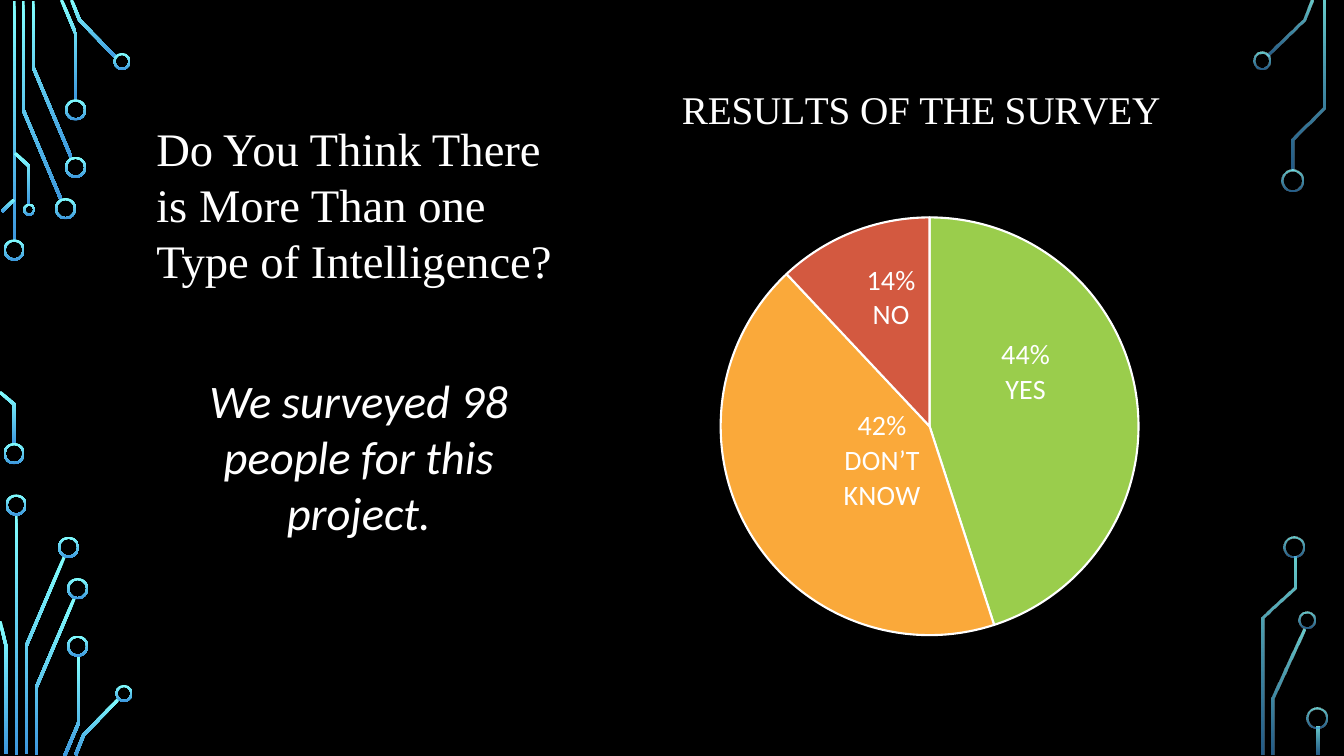
from lxml import etree
from pptx import Presentation
from pptx.chart.data import CategoryChartData
from pptx.dml.color import RGBColor
from pptx.enum import chart as ce, shapes as se, text as te
from pptx.oxml import ns
from pptx.util import Inches, Pt

# Content
ASK = "Do You Think There is More Than one Type of Intelligence?"
NOTE = "We surveyed 98 people for this project."
HEAD = "RESULTS OF THE SURVEY"

BLACK = RGBColor(0, 0, 0)
WHITE = RGBColor(255, 255, 255)
CYAN = RGBColor(0x82, 0xFF, 0xFF)
BLUE = RGBColor(0x3D, 0x97, 0xDE)
GREEN = RGBColor(0x9A, 0xCD, 0x4C)
AMBER = RGBColor(0xFA, 0xA9, 0x3A)
RED = RGBColor(0xD3, 0x59, 0x40)
SERIF, SANS = "Times New Roman", "Calibri"

# Survey slices: category, value, colour, label, label shift (share of chart)
SLICES = [
    ("1", 45, GREEN, "44%\nYES", (-0.01, -0.06)),
    ("2", 43, AMBER, "42%\nDON’T\nKNOW", (0.06, -0.03)),
    ("3", 12, RED, "14%\nNO", (0, -0.05)),
]

# Circuit wires as centre lines, and rings as (centre x, centre y, size)
LEFT_WIRES = [
    [(0.14, 0.01), (0.14, 2.4)],
    [(0.23, 0.01), (0.23, 1.09), (0.61, 1.99)],
    [(0.33, 0.01), (0.33, 0.67), (0.71, 1.57)],
    [(0.61, 0), (0.75, 0.33), (0.75, 1)],
    [(0.71, 0), (0.79, 0.2), (1.15, 0.57)],
    [(0.02, 2.1), (0.14, 1.98)],
    [(0, 3.89), (0.14, 4.01), (0.14, 4.41)],
    [(0.15, 1.52), (0.29, 1.65), (0.29, 2.03)],
    [(0.16, 5.1), (0.16, 7.49)],
    [(0.26, 7.48), (0.26, 6.41), (0.64, 5.52)],
    [(0.06, 7.48), (0.06, 6.41), (0, 6.16)],
    [(0.36, 7.49), (0.36, 6.82), (0.74, 5.93)],
    [(0.64, 7.5), (0.78, 7.17), (0.78, 6.5)],
    [(0.75, 7.49), (0.83, 7.29), (1.18, 6.93)],
]
LEFT_RINGS = [
    (0.14, 2.48, 0.21), (0.14, 4.5, 0.21), (0.65, 2.07, 0.21),
    (0.75, 1.66, 0.21), (0.75, 1.09, 0.21), (1.21, 0.61, 0.17),
    (0.29, 2.08, 0.12), (0.16, 5.01, 0.21), (0.68, 5.43, 0.21),
    (0.77, 5.84, 0.21), (0.77, 6.41, 0.21), (1.23, 6.88, 0.17),
]
RIGHT_WIRES = [
    [(12.57, 0.55), (12.93, 0.2), (13.01, 0)],
    [(12.63, 7.49), (12.63, 6.93), (12.93, 6.24)],
    [(12.82, 1.69), (12.82, 1.38), (13.13, 1.07), (13.13, 0.01)],
    [(12.53, 7.49), (12.53, 6.13), (12.84, 5.83), (12.84, 5.52)],
    [(13.07, 7.21), (13.07, 7.49)],
]
RIGHT_RINGS = [
    (12.52, 0.6, 0.17), (12.82, 1.79, 0.21), (12.96, 6.15, 0.17),
    (12.83, 5.43, 0.21), (13.06, 7.12, 0.21),
]
SIDES = [(LEFT_WIRES, LEFT_RINGS, (100, 100)),
         (RIGHT_WIRES, RIGHT_RINGS, (80, 60))]
HALF = 0.03 / 2  # half a wire's width

prs = Presentation()
prs.slide_width, prs.slide_height = Inches(13.33), Inches(7.5)
slide = prs.slides.add_slide(prs.slide_layouts[5])
slide.background.fill.solid()
slide.background.fill.fore_color.rgb = BLACK


# Circuit decoration
def glow(shape, alphas):
    shape.shadow.inherit = False
    shape.line.fill.background()
    shape.fill.gradient()
    shape.fill.gradient_angle = 270
    for stop, rgb in zip(shape.fill.gradient_stops, (CYAN, BLUE)):
        stop.color.rgb = rgb
    for color, alpha in zip(shape._element.spPr.iter(ns.qn("a:srgbClr")), alphas):
        if alpha < 100:
            etree.SubElement(color, ns.qn("a:alpha"), val=str(alpha * 1000))


def band(line):
    """Outline of a wire: its centre line moved to both sides, mitred."""
    pts = [complex(*p) for p in line]
    norms = [(b - a) / abs(b - a) * 1j for a, b in zip(pts, pts[1:])]
    pairs = zip([norms[0]] + norms, norms + [norms[-1]])
    offs = [HALF * (m + n) / (1 + (m * n.conjugate()).real) for m, n in pairs]
    near = [p + o for p, o in zip(pts, offs)]
    far = [p - o for p, o in zip(pts, offs)]
    return [(Inches(p.real), Inches(p.imag)) for p in near + far[::-1]]


for wires, rings, alphas in SIDES:
    for wire in wires:
        edge = band(wire)
        pen = slide.shapes.build_freeform(*edge[0])
        pen.add_line_segments(edge[1:], close=True)
        glow(pen.convert_to_shape(), alphas)
    for x, y, size in rings:
        ring = slide.shapes.add_shape(
            se.MSO_SHAPE.DONUT, Inches(x - size / 2), Inches(y - size / 2),
            Inches(size), Inches(size))
        ring.adjustments[0] = 0.02 / size
        glow(ring, alphas)


# Question and note
def write(box, words, place, face, align, slant):
    box.left, box.top, box.width, box.height = map(Inches, place)
    frame = box.text_frame
    frame.text = words
    frame.word_wrap = True
    frame.auto_size = te.MSO_AUTO_SIZE.NONE
    frame.vertical_anchor = te.MSO_ANCHOR.TOP
    para = frame.paragraphs[0]
    para.alignment = align
    para.space_before = Pt(0)
    para.line_spacing = Pt(40)
    font = para.runs[0].font
    font.name, font.size, font.italic = face, Pt(33.3), slant
    font.color.rgb = WHITE


write(slide.shapes.title, ASK, (1.45, 1.14, 4.22, 1.8),
      SERIF, te.PP_ALIGN.LEFT, False)
write(slide.shapes.add_textbox(0, 0, 0, 0), NOTE, (1.45, 3.64, 4.22, 1.8),
      SANS, te.PP_ALIGN.CENTER, True)


# Survey pie
def layout(**vals):
    node = etree.Element(ns.qn("c:layout"))
    spot = etree.SubElement(node, ns.qn("c:manualLayout"))
    for tag, val in vals.items():
        etree.SubElement(spot, ns.qn("c:" + tag), val=str(val))
    return node


data = CategoryChartData()
data.categories = [s[0] for s in SLICES]
data.add_series("Series 1", [s[1] for s in SLICES])
chart = slide.shapes.add_chart(
    ce.XL_CHART_TYPE.PIE, Inches(5.64), Inches(0.65),
    Inches(7.02), Inches(6.28), data).chart
chart.has_legend = False
chart.font.name, chart.font.size = SANS, Pt(10)
chart.font.color.rgb = WHITE

title = chart.chart_title
title.text_frame.text = HEAD
font = title.text_frame.paragraphs[0].runs[0].font
font.name, font.size, font.bold = SERIF, Pt(28), False
font.color.rgb = WHITE
title.include_in_layout = False
for old in title._element.findall(ns.qn("c:layout")):
    title._element.remove(old)
title._element.find(ns.qn("c:tx")).addnext(
    layout(xMode="edge", yMode="edge", x=0.15, y=0.02))

area = chart._chartSpace.chart.plotArea
for old in area.findall(ns.qn("c:layout")):
    area.remove(old)
area.insert(0, layout(layoutTarget="inner", xMode="edge", yMode="edge",
                      x=0.21, y=0.24, w=0.6, h=0.66))

plot = chart.plots[0]
plot.vary_by_categories = True
for i, (_, _, rgb, words, (dx, dy)) in enumerate(SLICES):
    point = plot.series[0].points[i]
    point.format.fill.solid()
    point.format.fill.fore_color.rgb = rgb
    point.format.line.color.rgb = WHITE
    point.format.line.width = Pt(1.5)
    label = point.data_label
    label.text_frame.text = words
    for para in label.text_frame.paragraphs:
        font = para.runs[0].font
        font.name, font.size = SANS, Pt(20)
        font.color.rgb = WHITE
    label.position = ce.XL_LABEL_POSITION.CENTER
    node = label._dLbl
    node.find(ns.qn("c:idx")).addnext(layout(x=dx, y=dy))

prs.save("out.pptx")
